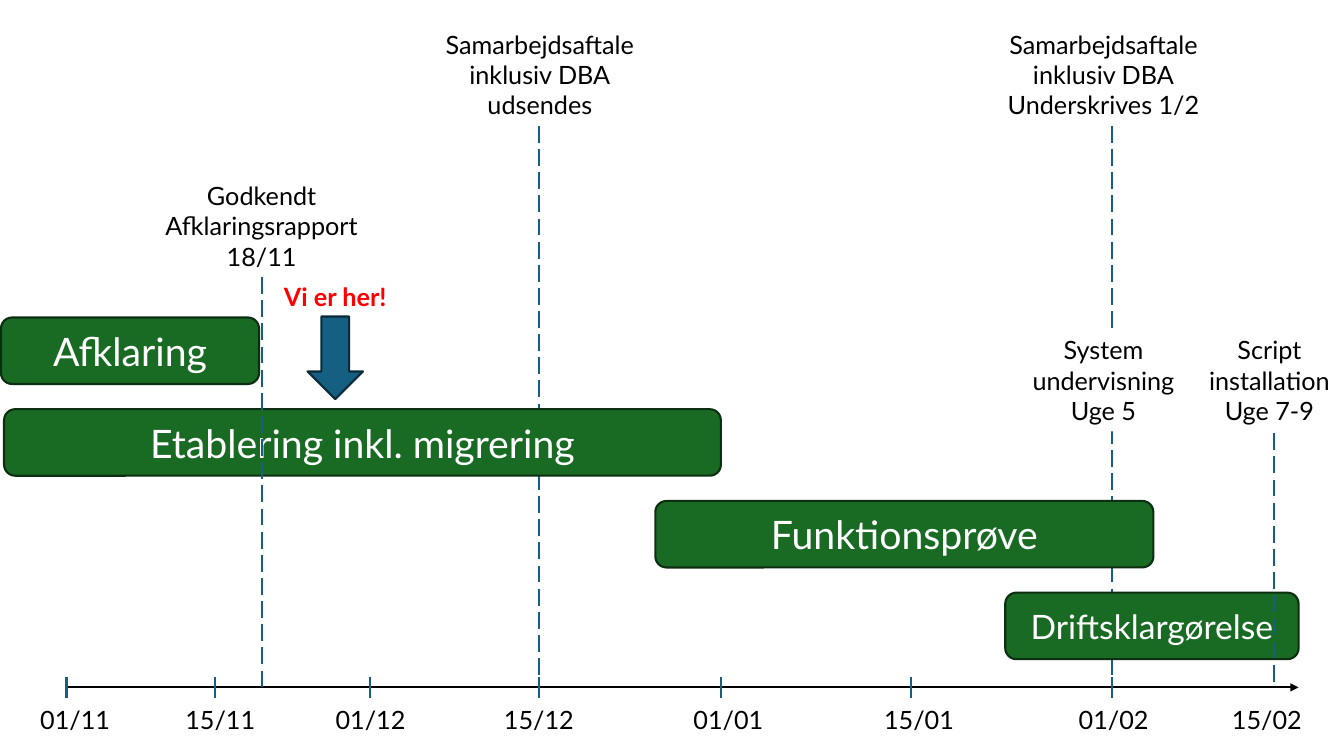
from lxml.etree import SubElement
from pptx import Presentation
from pptx.dml.color import RGBColor
from pptx.enum.dml import MSO_LINE
from pptx.enum.shapes import MSO_CONNECTOR, MSO_SHAPE
from pptx.enum.text import MSO_ANCHOR, PP_ALIGN
from pptx.oxml.ns import qn
from pptx.util import Inches, Pt

THEME = {
    "font": "Lato", "label": 18, "bar": 28, "small": 24, "stroke": 1.5,
    "green": "196B24", "edge": "0B2F10", "blue": "156082", "navy": "092A39",
    "white": "FFFFFF", "black": "000000", "red": "FF0000",
}


def tint(name):
    return RGBColor.from_string(THEME[name])


deck = Presentation()
deck.slide_width, deck.slide_height = Inches(13.33), Inches(7.5)
slide = deck.slides.add_slide(deck.slide_layouts[6])
shapes = slide.shapes


def line(x1, y1, x2, y2, color="blue", dash=None):
    link = shapes.add_connector(MSO_CONNECTOR.STRAIGHT, *map(Inches, (x1, y1, x2, y2)))
    link.line.color.rgb = tint(color)
    link.line.width = Pt(THEME["stroke"])
    if dash:
        link.line.dash_style = dash
    SubElement(link._element.spPr, qn("a:effectLst"))
    return link


def box(area, text="", kind=MSO_SHAPE.RECTANGLE, fill=None, edge=None,
        size="label", color="black", align=PP_ALIGN.CENTER, bold=False):
    """Add a shape; without a fill or edge it is a plain label."""
    shape = shapes.add_shape(kind, *map(Inches, area))
    shape.shadow.inherit = False
    if fill:
        shape.fill.solid()
        shape.fill.fore_color.rgb = tint(fill)
    else:
        shape.fill.background()
    if edge:
        shape.line.color.rgb = tint(edge)
        shape.line.width = Pt(THEME["stroke"])
    else:
        shape.line.fill.background()
    frame = shape.text_frame
    frame.word_wrap = True
    frame.vertical_anchor = MSO_ANCHOR.MIDDLE if edge else MSO_ANCHOR.TOP
    frame.text = text
    for para in frame.paragraphs:
        para.alignment = align
        for run in para.runs:
            run.font.name = THEME["font"]
            run.font.size = Pt(THEME[size])
            run.font.bold = bold
            run.font.color.rgb = tint(color)


# Milestones behind the bars
AXIS = 6.82
for x in (11.03, 5.35):
    line(x, 1.25, x, AXIS, dash=MSO_LINE.LONG_DASH)

# Phases, one per row
TOP, STEP, HIGH = 3.15, 0.91, 0.66
phases = [
    ("Afklaring", 0.01, 2.56, "bar"),
    ("Etablering inkl. migrering", 0.04, 7.11, "bar"),
    ("Funktionsprøve", 6.5, 4.94, "bar"),
    ("Driftsklargørelse", 9.97, 2.91, "small"),
]
for row, (name, left, width, size) in enumerate(phases):
    box((left, TOP + row * STEP, width, HIGH), name, MSO_SHAPE.ROUNDED_RECTANGLE,
        "green", "edge", size, "white")

# Time axis: tick and label start for each date
axis = line(0.66, AXIS, 12.88, AXIS, "black")
SubElement(axis.line._get_or_add_ln(), qn("a:tailEnd"), type="triangle")
dates = [
    ("01/11", 0.66, 0.3), ("15/11", 2.13, 1.74), ("01/12", 3.67, 3.23),
    ("15/12", 5.35, 4.9), ("01/01", 7.15, 6.78), ("15/01", 9.04, 8.67),
    ("01/02", 11.03, 10.6), ("15/02", None, 12.12),
]
for date, tick, left in dates:
    if tick:
        line(tick, AXIS - 0.1, tick, AXIS + 0.1)
    box((left, 6.94, 1, 0.4), date, align=PP_ALIGN.LEFT)

# Milestones in front of the bars
for x, top in ((2.6, 2.75), (12.64, 4.07)):
    line(x, top, x, AXIS, dash=MSO_LINE.LONG_DASH)

# Milestone labels
labels = [
    ("Godkendt Afklaringsrapport\n18/11", 1.51, 1.74, 2.17, None),
    ("Samarbejdsaftale inklusiv DBA\nudsendes", 4.27, 0.24, 2.17, None),
    ("Samarbejdsaftale inklusiv DBA\nUnderskrives 1/2", 9.86, 0.24, 2.17, "white"),
    ("System undervisning\nUge 5", 10.13, 3.27, 1.63, "white"),
    ("Script installation\nUge 7-9", 11.88, 3.27, 1.42, "white"),
]
for text, left, top, width, fill in labels:
    box((left, top, width, 1.01), text, fill=fill)

# Current position
box((2.24, 2.74, 2.17, 0.4), "Vi er her!", color="red", bold=True)
box((3.05, 3.14, 0.55, 0.82), kind=MSO_SHAPE.DOWN_ARROW, fill="blue", edge="navy")

deck.save("out.pptx")
